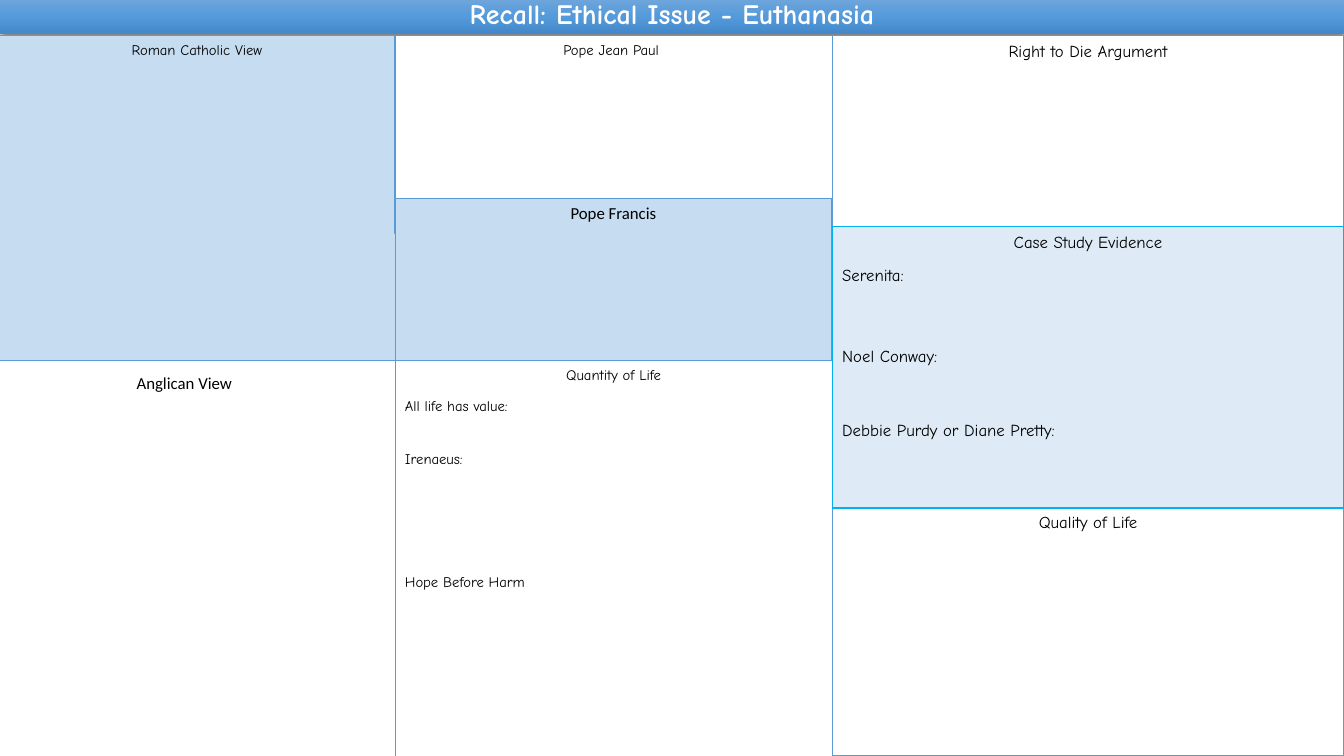
"""Build a recall sheet on the ethical issue of euthanasia."""
from dataclasses import dataclass

from lxml.etree import SubElement
from pptx import Presentation
from pptx.dml.color import RGBColor
from pptx.enum.shapes import MSO_SHAPE as Preset
from pptx.enum.text import MSO_ANCHOR as Anchor, PP_ALIGN as Align
from pptx.oxml import parse_xml
from pptx.oxml.ns import nsdecls, qn
from pptx.shapes.base import BaseShape
from pptx.slide import Slide
from pptx.text.text import TextFrame
from pptx.util import Pt


@dataclass(frozen=True)
class Theme:
    """Colours, fonts and type sizes of the sheet."""
    white: str = "FFFFFF"
    black: str = "000000"
    blue: str = "C6DCF0"
    pale: str = "DEEBF7"
    border: str = "5B9BD5"
    bright_border: str = "00B0F0"
    banner: tuple[str, ...] = ("71A6DB", "559BDB", "448ACA")
    hand: str = "Comic Neue"
    plain: str = "Calibri"
    title: float = 20
    large: float = 12
    small: float = 10.5


@dataclass(frozen=True)
class Prompt:
    """A left-aligned line with the writing space above it."""
    text: str
    space: float


@dataclass(frozen=True)
class Panel:
    """A headed box given by its edges."""
    heading: str
    left: float
    top: float
    right: float
    bottom: float
    fill: str
    size: float
    line_width: float = 0.5
    border: str = Theme.border
    font: str = Theme.hand
    prompts: tuple[Prompt, ...] = ()


THEME = Theme()
WIDTH, HEIGHT = 960, 540
MIDDLE, RIGHT = 282.2, 594.5
TOP, FRANCIS, CASE, LOWER, QUALITY = 25.5, 141.6, 161.9, 257.5, 362.2

PANELS = (
    Panel("Roman Catholic View", -0.7, TOP, MIDDLE, LOWER, THEME.blue, THEME.small),
    Panel("Pope Jean Paul ", MIDDLE, TOP, RIGHT, 167, THEME.white, THEME.small, 1),
    Panel("Pope Francis", MIDDLE, FRANCIS, RIGHT - 0.3, LOWER, THEME.blue, THEME.large,
          font=THEME.plain),
    Panel("Quality of Life", RIGHT, QUALITY, WIDTH, HEIGHT, THEME.white, THEME.large, 0),
    Panel("Quantity of Life", MIDDLE, LOWER, RIGHT, HEIGHT, THEME.white, THEME.small,
          prompts=(Prompt("All life has value:", 9.6), Prompt("Irenaeus:", 25.2),
                   Prompt("Hope Before Harm", 75.4))),
    Panel("Right to Die Argument", RIGHT, TOP, WIDTH, CASE, THEME.white, THEME.large, 1),
    Panel("Case Study Evidence", RIGHT, CASE, WIDTH, 362.9, THEME.pale, THEME.large,
          0.75, THEME.bright_border,
          prompts=(Prompt("Serenita:", 9.3), Prompt("Noel Conway:", 43.5),
                   Prompt("Debbie Purdy or Diane Pretty:", 38.5))),
)


def write(frame: TextFrame, text: str, *, size: float, font: str = THEME.hand,
          color: str = THEME.black, bold: bool = False, align: Align = Align.CENTER,
          space: float = 0, spacing: float = 1, first: bool = True) -> None:
    """Write one formatted paragraph into a text frame."""
    paragraph = frame.paragraphs[0] if first else frame.add_paragraph()
    paragraph.alignment = align
    paragraph.space_before = Pt(space)
    paragraph.line_spacing = spacing
    run = paragraph.add_run()
    run.text = text
    run.font.name = font
    run.font.size = Pt(size)
    run.font.bold = bold
    run.font.color.rgb = RGBColor.from_string(color)


def add_box(slide: Slide, left: float, top: float, right: float, bottom: float) -> BaseShape:
    """Add a plain rectangle without a shadow."""
    shape = slide.shapes.add_shape(Preset.RECTANGLE, Pt(left), Pt(top),
                                   Pt(right - left), Pt(bottom - top))
    shape.shadow.inherit = False
    shape.text_frame.word_wrap = True
    return shape


def add_banner(slide: Slide, text: str) -> None:
    """Add the shaded title bar."""
    shape = add_box(slide, 0, -1.6, WIDTH, 24)
    shape.line.fill.background()
    properties = shape.fill._xPr
    stops = "".join(f'<a:gs pos="{index * 50000}"><a:srgbClr val="{color}"/></a:gs>'
                    for index, color in enumerate(THEME.banner))
    gradient = parse_xml(f'<a:gradFill {nsdecls("a")} rotWithShape="1"><a:gsLst>{stops}'
                         '</a:gsLst><a:lin ang="5400000" scaled="0"/></a:gradFill>')
    properties.find(qn("a:prstGeom")).addnext(gradient)
    shadow = SubElement(properties.find(qn("a:effectLst")), qn("a:outerShdw"),
                        blurRad=str(Pt(4.5)), dist=str(Pt(1.5)), dir="5400000",
                        algn="ctr", rotWithShape="0")
    shade = SubElement(shadow, qn("a:srgbClr"), val=THEME.black)
    SubElement(shade, qn("a:alpha"), val="63000")
    shape.text_frame.vertical_anchor = Anchor.MIDDLE
    write(shape.text_frame, text, size=THEME.title, color=THEME.white, bold=True, spacing=0.9)


def add_panel(slide: Slide, panel: Panel) -> None:
    """Add a headed panel with its prompts."""
    shape = add_box(slide, panel.left, panel.top, panel.right, panel.bottom)
    shape.fill.solid()
    shape.fill.fore_color.rgb = RGBColor.from_string(panel.fill)
    shape.line.color.rgb = RGBColor.from_string(panel.border)
    shape.line.width = Pt(panel.line_width)
    frame = shape.text_frame
    frame.vertical_anchor = Anchor.TOP
    write(frame, panel.heading, size=panel.size, font=panel.font)
    for prompt in panel.prompts:
        write(frame, prompt.text, size=panel.size, font=panel.font, align=Align.LEFT,
              space=prompt.space, first=False)


def add_label(slide: Slide, text: str) -> None:
    """Add the heading of the open lower-left area."""
    label = slide.shapes.add_textbox(Pt(73), Pt(262.5), Pt(117.4), Pt(21.8))
    label.text_frame.word_wrap = True
    write(label.text_frame, text, size=THEME.large, font=THEME.plain)


def main() -> None:
    """Build and save the presentation."""
    presentation = Presentation()
    presentation.slide_width, presentation.slide_height = Pt(WIDTH), Pt(HEIGHT)
    slide = presentation.slides.add_slide(presentation.slide_layouts[6])
    add_banner(slide, "Recall: Ethical Issue - Euthanasia")
    for panel in PANELS:
        add_panel(slide, panel)
    add_label(slide, "Anglican View")
    presentation.save("out.pptx")


if __name__ == "__main__":
    main()
